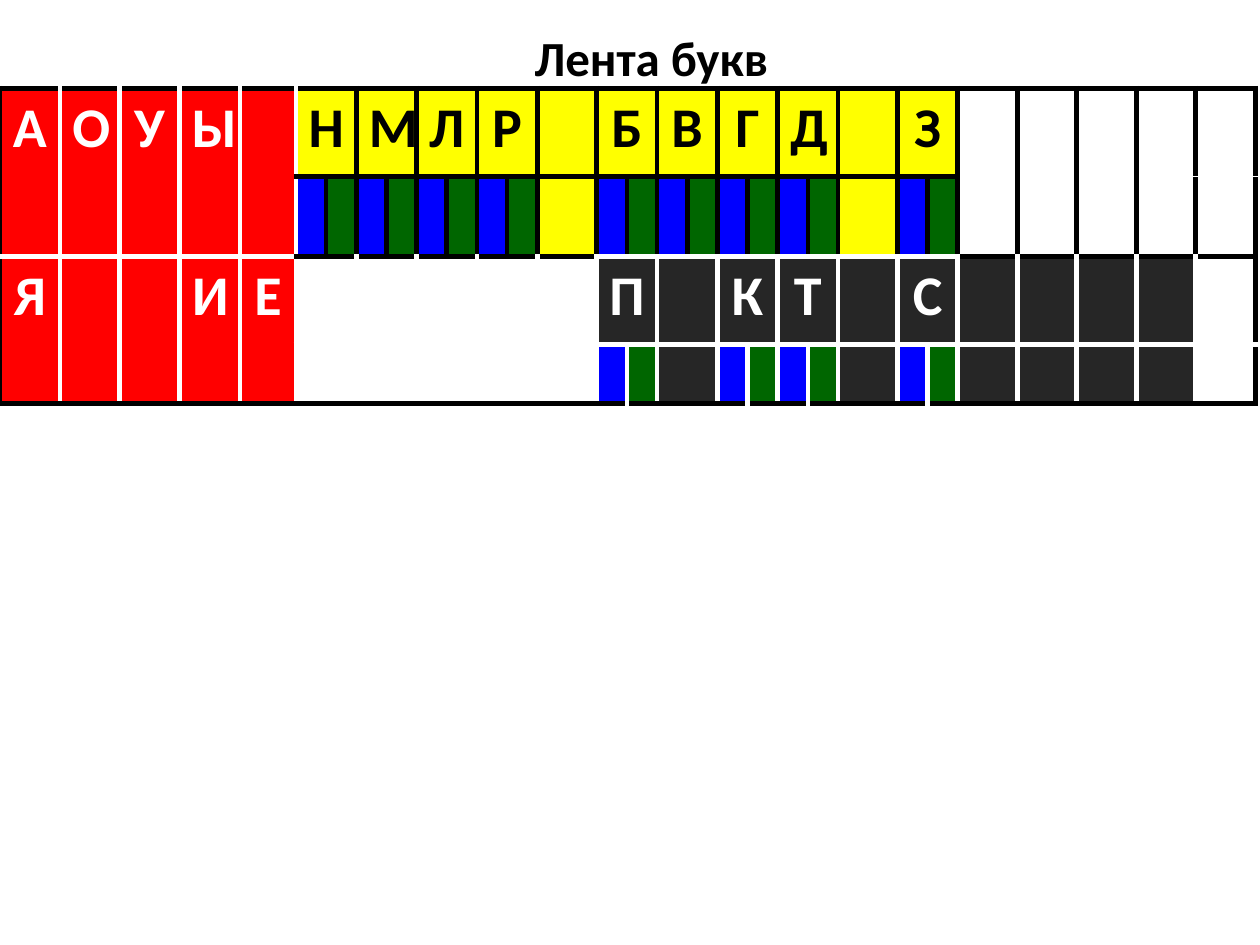
from lxml.etree import SubElement
from pptx import Presentation
from pptx.dml.color import RGBColor
from pptx.enum.text import PP_ALIGN
from pptx.oxml import parse_xml
from pptx.oxml.ns import nsdecls, qn
from pptx.util import Pt

COLORS = {
    "black": "000000",
    "white": "FFFFFF",
    "vowel": "FF0000",
    "voiced": "FFFF00",
    "voiceless": "262626",
    "hard": "0000FF",
    "soft": "006600",
}
FONT = "Calibri"
EDGE_COLORS = {"K": "black", "W": "white"}
UPPER_LETTERS = "АОУЫ НМЛР БВГД З     "
LOWER_LETTERS = "Я  ИЕ     П КТ С     "
PAIRED_SLOTS = {5, 6, 7, 8, 10, 11, 12, 13, 15}
VOWEL_WIDTHS = [34.2, 34.2, 34.2, 34.6, 32]
HALF_WIDTH, SINGLE_WIDTH = 17.2, 34
ROW_HEIGHTS = [50.4, 28.1, 50.4, 33.8]
LAST_SLOT = len(UPPER_LETTERS) - 1


def add_run(paragraph, wording, size, color):
    paragraph.alignment = PP_ALIGN.CENTER
    run = paragraph.add_run()
    run.text = wording
    run.font.name = FONT
    run.font.size = Pt(size)
    run.font.bold = True
    run.font.color.rgb = RGBColor.from_string(COLORS[color])


def add_heading(slide):
    heading = slide.shapes.add_textbox(Pt(12.2), Pt(12.2), Pt(720), Pt(482.4))
    heading.text_frame.word_wrap = True
    add_run(heading.text_frame.paragraphs[0], "Лента букв", 28, "black")


def paint_cell(cell, fill, edges):
    cell.fill.solid()
    cell.fill.fore_color.rgb = RGBColor.from_string(COLORS[fill])
    properties = cell._tc.get_or_add_tcPr()
    drawn = [(side, code) for side, code in zip("LRTB", edges) if code != "-"]
    for position, (side, code) in enumerate(drawn):
        color = COLORS[EDGE_COLORS[code]]
        properties.insert(position, parse_xml(
            f'<a:ln{side} {nsdecls("a")} w="{Pt(3)}"><a:solidFill>'
            f'<a:srgbClr val="{color}"/></a:solidFill></a:ln{side}>'))


def fill_letter(cell, letter, color):
    paragraph = cell.text_frame.paragraphs[0]
    if letter.strip():
        add_run(paragraph, letter, 32, color)
    else:
        SubElement(paragraph._p, qn("a:endParaRPr"), sz="3200")


def slot_fill(slot, lower):
    if slot < 5:
        return "vowel"
    if lower:
        return "voiceless" if 10 <= slot < LAST_SLOT else "white"
    return "voiced" if slot <= 15 else "white"


def letter_edges(slot, lower):
    if lower:
        if slot < 5:
            return "KWWK" if slot == 0 else "WWWK"
        if slot == LAST_SLOT:
            return "WKKW"
        return "WWWW" if 10 <= slot <= 15 else "WWKW"
    if slot < 5:
        return "KWKW" if slot == 0 else "WWKW"
    if slot == LAST_SLOT:
        return "KKK-"
    return "WKKK" if slot == 5 else "KKKK"


def marker_edges(slot, lower):
    if lower:
        return "WKWK" if slot == LAST_SLOT else "WWWK"
    if slot == LAST_SLOT:
        return "KK-K"
    if slot == 5:
        return "WKKK"
    return "KKKW" if 10 <= slot <= 15 else "KKKK"


def fill_band(table, letters, lower):
    row = 2 if lower else 0
    column = 0
    for slot, letter in enumerate(letters):
        paired = slot in PAIRED_SLOTS
        fill = slot_fill(slot, lower)
        ink = "black" if fill == "voiced" else "white"
        letter_cell = table.cell(row, column)
        marker_cell = table.cell(row + 1, column)
        paint_cell(letter_cell, fill, letter_edges(slot, lower))
        fill_letter(letter_cell, letter, ink)
        edges = marker_edges(slot, lower)
        tall = slot < 5 or (not lower and 16 <= slot < LAST_SLOT)
        if tall:
            letter_cell.merge(marker_cell)
        elif paired and letter.strip():
            paint_cell(marker_cell, "hard", edges)
            paint_cell(table.cell(row + 1, column + 1), "soft", edges[1] + edges[1:])
        else:
            paint_cell(marker_cell, fill, edges)
            if paired:
                marker_cell.merge(table.cell(row + 1, column + 1))
            elif slot == 9 and not lower:
                fill_letter(marker_cell, letter, ink)
        if paired:
            letter_cell.merge(table.cell(row, column + 1))
        column += 2 if paired else 1


def add_letter_ribbon(slide):
    widths = list(VOWEL_WIDTHS)
    for slot in range(5, LAST_SLOT + 1):
        widths += [HALF_WIDTH] * 2 if slot in PAIRED_SLOTS else [SINGLE_WIDTH]
    ribbon = slide.shapes.add_table(len(ROW_HEIGHTS), len(widths), Pt(0), Pt(50.4),
                                    Pt(sum(widths)), Pt(sum(ROW_HEIGHTS))).table
    ribbon.first_row = False
    ribbon.horz_banding = False
    for column, width in zip(ribbon.columns, widths):
        column.width = Pt(width)
    for row, height in zip(ribbon.rows, ROW_HEIGHTS):
        row.height = Pt(height)
    fill_band(ribbon, UPPER_LETTERS, False)
    fill_band(ribbon, LOWER_LETTERS, True)


def main():
    presentation = Presentation()
    presentation.slide_width = Pt(720)
    presentation.slide_height = Pt(540)
    slide = presentation.slides.add_slide(presentation.slide_layouts[6])
    add_heading(slide)
    add_letter_ribbon(slide)
    presentation.save("out.pptx")


if __name__ == "__main__":
    main()
